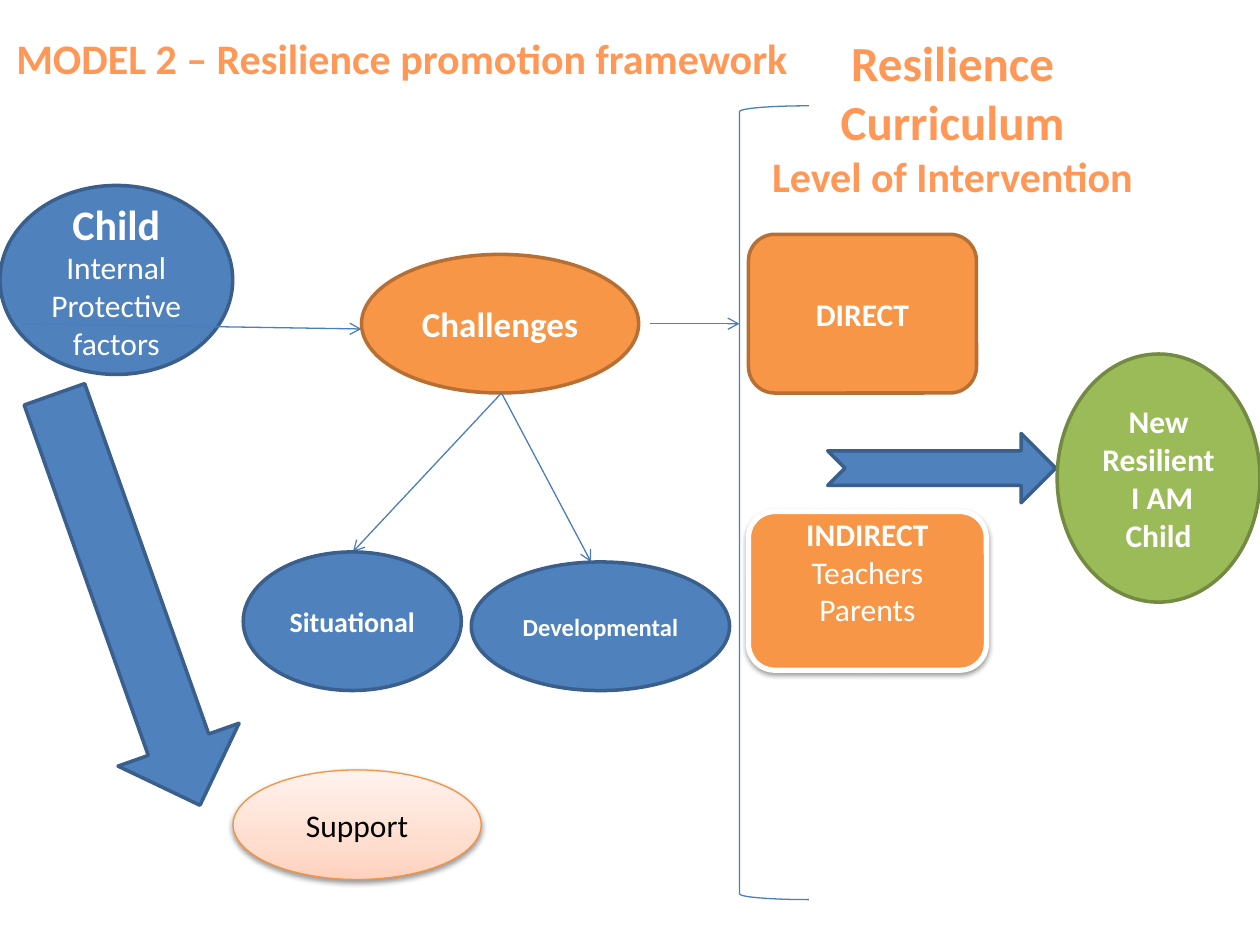
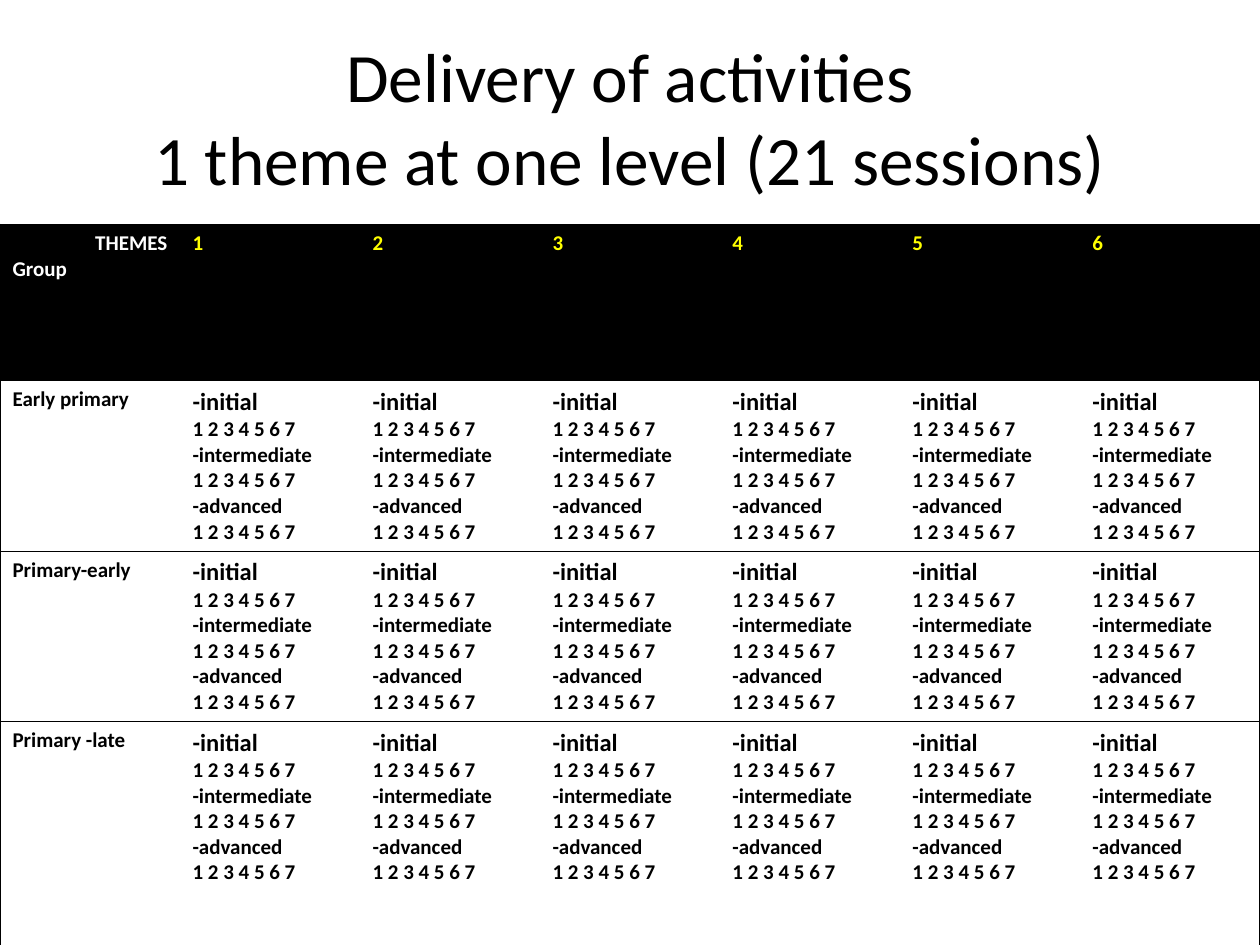
from copy import deepcopy
from dataclasses import dataclass

from lxml import etree
from pptx import Presentation
from pptx.dml.color import RGBColor
from pptx.enum import shapes, text
from pptx.oxml import ns
from pptx.util import Pt

SHAPE = shapes.MSO_SHAPE
ALIGN = text.PP_ALIGN
ANCHOR = text.MSO_ANCHOR


@dataclass(frozen=True)
class Theme:
    font: str = "Calibri"
    black: str = "000000"
    white: str = "FFFFFF"
    yellow: str = "FFFF00"
    heading: str = "FF9856"
    connector: str = "4B7EBC"
    # Pairs of fill and outline
    blue: tuple = ("4F81BD", "3A5F8C")
    orange: tuple = ("F79646", "B76F34")
    green: tuple = ("9BBB59", "738A42")
    raised: tuple = ("F79646", "FFFFFF")
    peach: tuple = (((0, "FFD2BD"), (0.35, "FFDED0"), (1, "FFF2ED")), "F69240")
    # Type sizes
    title: float = 39.6
    large: int = 28
    medium: int = 24
    node: int = 20
    body: int = 18
    minor: int = 16
    small: int = 14
    cell: int = 12
    # Line widths
    thin: float = 0.75
    outline: int = 2
    thick: int = 3


class SlideBuilder:
    def __init__(self, deck, theme):
        self.deck, self.theme, self.page = deck, theme, None

    def new_slide(self):
        self.page = self.deck.slides.add_slide(self.deck.slide_layouts[5])

    @staticmethod
    def add_xml(parent, tag, **attributes):
        return etree.SubElement(parent, ns.qn(tag), attributes)

    def set_lines(self, frame, lines, color, align=ALIGN.CENTER):
        """Each line is (words, size, bold)."""
        frame.text = "\n".join(words for words, _, _ in lines)
        for para, (_, size, bold) in zip(frame.paragraphs, lines):
            para.alignment = align
            for span in para.runs:
                span.font.name = self.theme.font
                span.font.size = Pt(size)
                span.font.bold = bold
                span.font.color.rgb = RGBColor.from_string(color)

    def title(self, words, place, size, color, bold=False, wrap=True, anchor=ANCHOR.MIDDLE):
        box = self.page.shapes.title
        box.left, box.top, box.width, box.height = map(Pt, place)
        frame = box.text_frame
        self.set_lines(frame, [(words, size, bold)], color)
        frame.auto_size = text.MSO_AUTO_SIZE.NONE
        frame.word_wrap = wrap
        frame.vertical_anchor = anchor

    def text_box(self, lines, place, color):
        frame = self.page.shapes.add_textbox(*map(Pt, place)).text_frame
        frame.word_wrap = True
        self.set_lines(frame, lines, color)

    def shape(self, kind, place, colors, lines=(), color=None, width=None, shadow=False):
        box = self.page.shapes.add_shape(kind, *map(Pt, place))
        box.shadow.inherit = False
        fill, line = colors
        if fill is None:
            box.fill.background()
        elif isinstance(fill, str):
            box.fill.solid()
            box.fill.fore_color.rgb = RGBColor.from_string(fill)
        else:
            self.gradient(box, fill)
        box.line.color.rgb = RGBColor.from_string(line)
        box.line.width = Pt(width or self.theme.outline)
        if shadow:
            self.drop_shadow(box)
        if lines:
            box.text_frame.vertical_anchor = ANCHOR.MIDDLE
            self.set_lines(box.text_frame, lines, color or self.theme.white)
        return box

    def gradient(self, box, stops):
        box.fill.gradient()
        box.fill.gradient_angle = 90
        stop_list = box._element.spPr.find(".//" + ns.qn("a:gsLst"))
        stop_list.insert(1, deepcopy(stop_list[0]))
        for stop, (position, color) in zip(box.fill.gradient_stops, stops):
            stop.position = position
            stop.color.rgb = RGBColor.from_string(color)

    def drop_shadow(self, box):
        effects = box._element.spPr.find(ns.qn("a:effectLst"))
        outer = self.add_xml(effects, "a:outerShdw", blurRad=str(Pt(3.1)), dist=str(Pt(1.6)),
                             dir="5400000", rotWithShape="0")
        tint = self.add_xml(outer, "a:srgbClr", val=self.theme.black)
        self.add_xml(tint, "a:alpha", val="38000")

    def arrow(self, start, end):
        link = self.page.shapes.add_connector(
            shapes.MSO_CONNECTOR.STRAIGHT, *map(Pt, start + end))
        link.line.color.rgb = RGBColor.from_string(self.theme.connector)
        link.line.width = Pt(self.theme.thin)
        properties = link._element.spPr
        self.add_xml(properties.find(ns.qn("a:ln")), "a:tailEnd", type="arrow")
        self.add_xml(properties, "a:effectLst")

    def table(self, place, row_heights, column_count):
        grid = self.page.shapes.add_table(
            len(row_heights), column_count, *map(Pt, place)).table
        grid.first_row = grid.horz_banding = False
        for row, height in zip(grid.rows, row_heights):
            row.height = Pt(height)
        for column in grid.columns:
            column.width = Pt(place[2] / column_count)
        return grid

    def cell(self, cell, lines, color, fill, sides):
        properties = cell._tc.get_or_add_tcPr()
        for side in "LRTB":
            border = self.add_xml(properties, f"a:ln{side}", w=str(Pt(self.theme.thin)))
            if side in sides:
                paint = self.add_xml(border, "a:solidFill")
                self.add_xml(paint, "a:srgbClr", val=self.theme.black)
            else:
                self.add_xml(border, "a:noFill")
        cell.fill.solid()
        cell.fill.fore_color.rgb = RGBColor.from_string(fill)
        self.set_lines(cell.text_frame, lines, color, ALIGN.LEFT)


def build_framework(builder):
    theme = builder.theme
    builder.new_slide()
    builder.title("MODEL 2 – Resilience promotion framework", (0, 15, 459.5, 36),
                  theme.medium, theme.heading, bold=True, wrap=False, anchor=ANCHOR.TOP)

    # Child and the challenges it meets
    builder.shape(SHAPE.OVAL, (0, 106, 133, 108), theme.blue,
                  [("Child", theme.medium, True)]
                  + [(words, theme.body, False) for words in ("Internal", "Protective", "factors")])
    builder.arrow((14.4, 185), (206.6, 188))
    builder.shape(SHAPE.OVAL, (206.6, 145.4, 158.4, 79.2), theme.orange,
                  [("Challenges", theme.node, True)])

    # Kinds of challenge
    fork = (286.6, 224.6)
    for words, size, place, target in (
            ("Situational", theme.minor, (139, 315.4, 124.6, 79.2), (201.6, 315.4)),
            ("Developmental", theme.small, (269.3, 321.1, 147.6, 73.5), (337.7, 321.1))):
        builder.arrow(fork, target)
        builder.shape(SHAPE.OVAL, place, theme.blue, [(words, size, True)])

    # Support
    support_arrow = builder.shape(SHAPE.DOWN_ARROW, (36, 218.2, 73.4, 249.1), theme.blue)
    support_arrow.rotation = 340.5
    builder.shape(SHAPE.OVAL, (133.2, 440, 141.8, 62.6), theme.peach,
                  [("Support", theme.body, False)], theme.black, theme.thin, shadow=True)

    # Levels of intervention
    builder.text_box([("Resilience Curriculum", theme.large, True),
                      ("Level of Intervention", theme.medium, True)],
                     (416.9, 15, 254.9, 150.5), theme.heading)
    builder.shape(SHAPE.ROUNDED_RECTANGLE, (427.7, 133.9, 130.3, 90.7), theme.orange,
                  [("DIRECT", theme.body, True)])
    indirect = builder.shape(SHAPE.ROUNDED_RECTANGLE, (427.7, 292.3, 136, 90.7), theme.raised,
                             [("INDIRECT", theme.body, True), ("Teachers", theme.body, False),
                              ("Parents", theme.body, False)],
                             width=theme.thick, shadow=True)
    indirect.text_frame.margin_bottom = Pt(25.6)
    builder.shape(SHAPE.LEFT_BRACKET, (422.6, 60.5, 39.6, 453.6), (None, theme.connector),
                  width=theme.thin)
    builder.arrow((371.5, 185), (422.6, 185))

    # Outcome
    builder.shape(SHAPE.NOTCHED_RIGHT_ARROW, (473, 247.7, 130.3, 39.6), theme.blue)
    builder.shape(SHAPE.OVAL, (604.1, 202.3, 115.9, 141.8), theme.green,
                  [("New Resilient", theme.body, True), (" I AM Child", theme.body, True)])


def build_delivery(builder):
    theme = builder.theme
    builder.new_slide()
    builder.title("Delivery of activities\v1 theme at one level (21 sessions)",
                  (36, 21.6, 648, 90), theme.title, theme.black)

    groups = ("Early primary", "Primary-early", "Primary -late")
    levels = (("-initial", theme.small), ("-intermediate", theme.cell), ("-advanced", theme.cell))
    sessions = " ".join(str(number) for number in range(1, 8))
    activities = [line for level, size in levels
                  for line in ((level, size, True), (sessions, theme.cell, True))]
    theme_count = 6
    grid = builder.table((0, 128.2, 720, 352), (89.3, 64, 57, 141.8), theme_count + 1)

    for column in range(theme_count + 1):
        sides = "TB" + {0: "L", theme_count: "R"}.get(column, "")
        # Header row
        labels = (str(column),) if column else ("THEMES", "Group")
        builder.cell(grid.cell(0, column), [(label, theme.cell, True) for label in labels],
                     theme.yellow if column else theme.white, theme.black, sides)
        # Group rows
        for row, group in enumerate(groups, 1):
            lines = activities if column else [(group, theme.cell, True)]
            builder.cell(grid.cell(row, column), lines, theme.black, theme.white, sides)
    grid.cell(0, 0).text_frame.paragraphs[0].alignment = ALIGN.RIGHT


def main():
    deck = Presentation()
    deck.slide_width, deck.slide_height = Pt(720), Pt(540)
    builder = SlideBuilder(deck, Theme())
    build_framework(builder)
    build_delivery(builder)
    deck.save("out.pptx")


if __name__ == "__main__":
    main()
